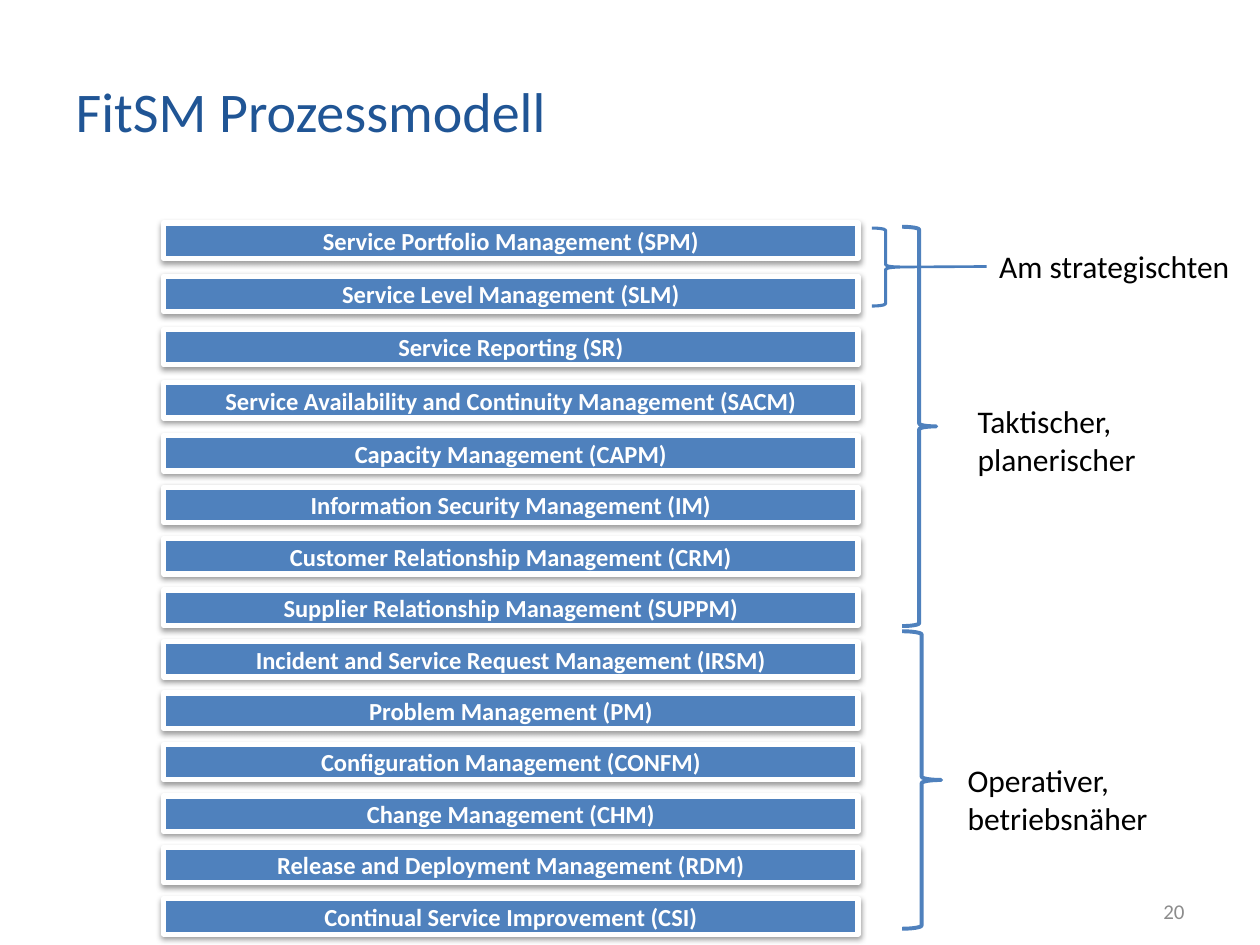
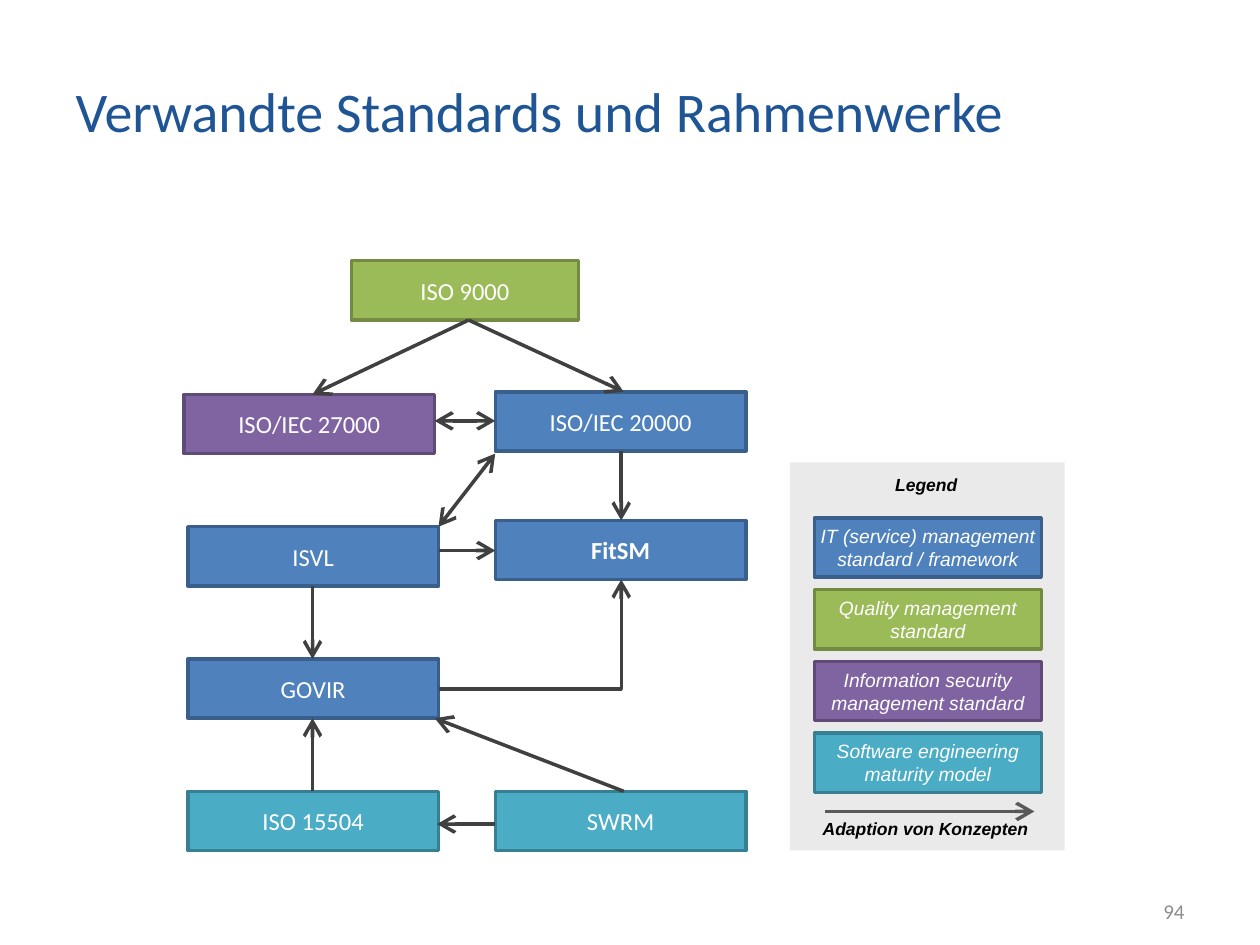
from dataclasses import dataclass

import pptx
import pptx.dml.color
import pptx.enum.shapes
import pptx.enum.text
import pptx.oxml.ns
import pptx.util
from lxml import etree

Pt = pptx.util.Pt
ALIGN = pptx.enum.text.PP_ALIGN
ANCHOR = pptx.enum.text.MSO_ANCHOR
SHAPE = pptx.enum.shapes.MSO_SHAPE
LINK = pptx.enum.shapes.MSO_CONNECTOR
qn = pptx.oxml.ns.qn

WHITE, BLACK, GREY = "FFFFFF", "000000", "8C8C8C"
NAVY, BLUE, STEEL = "205595", "4F81BD", "4B7EBC"
PANEL, DARK, SLATE = "EAEAEA", "404040", "595959"


@dataclass(frozen=True)
class Font:
    size: float
    hue: str
    name: str = "Calibri"
    bold: bool = False
    slant: bool = False
    align: object = ALIGN.LEFT


@dataclass(frozen=True)
class Area:
    left: float
    top: float
    width: float
    height: float

    def points(self) -> list:
        return [Pt(n) for n in (self.left, self.top, self.width, self.height)]


@dataclass(frozen=True)
class Kind:
    fill: str
    edge: str


@dataclass(frozen=True)
class Box:
    text: str
    kind: Kind
    left: float
    top: float
    width: float = 143.3
    bold: bool = False


@dataclass(frozen=True)
class Label:
    text: str
    area: Area


@dataclass(frozen=True)
class Brace:
    area: Area
    hue: str
    weight: float


@dataclass(frozen=True)
class Arrow:
    start: tuple
    end: tuple
    both: bool = False


TITLE = Font(32, NAVY)
NUMBER = Font(12, GREY, align=ALIGN.RIGHT)
BAR = Font(14, WHITE, bold=True, align=ALIGN.CENTER)
NOTE = Font(18, BLACK)
NODE = Font(14, WHITE, align=ALIGN.CENTER)
ENTRY = Font(11, WHITE, "Arial", slant=True, align=ALIGN.CENTER)
HEAD = Font(10, BLACK, "Arial", bold=True, slant=True, align=ALIGN.CENTER)

SERVICE = Kind(BLUE, "3A5F8C")
GRADE = Kind("9BBB59", "738A42")
SAFETY = Kind("8064A2", "5F4A78")
MODEL = Kind("4BACC6", "377F92")
HIGH = 33.8
TIGHT = (5, 3)

BARS = [
    "Service Portfolio Management (SPM)",
    "Service Level Management (SLM)",
    "Service Reporting (SR)",
    "Service Availability and Continuity Management (SACM)",
    "Capacity Management (CAPM)",
    "Information Security Management (IM)",
    "Customer Relationship Management (CRM)",
    "Supplier Relationship Management (SUPPM)",
    "Incident and Service Request Management (IRSM)",
    "Problem Management (PM)",
    "Configuration Management (CONFM)",
    "Change Management (CHM)",
    "Release and Deployment Management (RDM)",
    "Continual Service Improvement (CSI)",
]
NOTES = [
    Label("Taktischer,\vplanerischer", Area(551.5, 226, 106, 51)),
    Label("Operativer,\vbetriebsnäher", Area(545.8, 431.3, 119, 51)),
    Label("Am strategischten", Area(563.8, 137.5, 147.6, 29)),
]
BRACES = [
    Brace(Area(515.5, 129.6, 19.5, 228.2), BLUE, 2.25),
    Brace(Area(515.5, 360.7, 22.3, 170), BLUE, 2.25),
    Brace(Area(498.2, 130.3, 15.8, 44.6), STEEL, 1.75),
]

WEST, EAST = 107.3, 283
BOXES = [
    Box("ISO 9000", GRADE, 200.9, 149, 129.6),
    Box("ISO/IEC 27000", SAFETY, 105.1, 225.4),
    Box("ISO/IEC 20000", SERVICE, EAST, 223.9),
    Box("ISVL", SERVICE, WEST, 301),
    Box("FitSM", SERVICE, EAST, 297.4, bold=True),
    Box("GOVIR", SERVICE, WEST, 376.6),
    Box("ISO 15504", MODEL, WEST, 452.2),
    Box("SWRM", MODEL, EAST, 452.2),
]
ARROWS = [
    Arrow((267.8, 182.9), (178.6, 225.4)),
    Arrow((267.8, 182.9), (356.4, 223.9)),
    Arrow((248.4, 240.5), (EAST, 240.5), both=True),
    Arrow((250.6, 301), (EAST, 259.2), both=True),
    Arrow((355, 257.8), (355, 297.4)),
    Arrow((250.6, 314.6), (EAST, 314.6)),
    Arrow((178.6, 334.8), (178.6, 376.6)),
    Arrow((178.6, 452.2), (178.6, 410.4)),
    Arrow((356.4, 452.2), (248.4, 410.4)),
    Arrow((EAST, 470.9), (249.8, 470.9)),
]
BEND = Arrow((250.6, 393.8), (355, 331.2))
LEGEND = [
    ("IT (service) management\vstandard / framework", SERVICE),
    ("Quality management\nstandard", GRADE),
    ("Information security\vmanagement standard", SAFETY),
    ("Software engineering\vmaturity model", MODEL),
]
HEADS = [
    Label("Legend", Area(457.9, 267.8, 142.6, 18)),
    Label("Adaption von Konzepten", Area(447.1, 464.4, 163.4, 18)),
]


def shade(code: str) -> pptx.dml.color.RGBColor:
    return pptx.dml.color.RGBColor.from_string(code)


def write(shape, text: str, font: Font, anchor=ANCHOR.MIDDLE,
          wrap: bool = True, inset: tuple = (7.2, 3.6)) -> None:
    frame = shape.text_frame
    frame.text = text
    frame.word_wrap = wrap
    frame.auto_size = pptx.enum.text.MSO_AUTO_SIZE.NONE
    frame.vertical_anchor = anchor
    frame.margin_left = frame.margin_right = Pt(inset[0])
    frame.margin_top = frame.margin_bottom = Pt(inset[1])
    for line in frame.paragraphs:
        line.alignment = font.align
        for run in line.runs:
            run.font.name = font.name
            run.font.size = Pt(font.size)
            run.font.bold = font.bold
            run.font.italic = font.slant
            run.font.color.rgb = shade(font.hue)


def label(slide, item: Label, font: Font, **style) -> None:
    shape = slide.shapes.add_textbox(*item.area.points())
    write(shape, item.text, font, **style)


def draw(slide, area: Area, fill: str = "", edge: str = "",
         weight: float = 2, form=SHAPE.RECTANGLE):
    shape = slide.shapes.add_shape(form, *area.points())
    shape.shadow.inherit = False
    if fill:
        shape.fill.solid()
        shape.fill.fore_color.rgb = shade(fill)
    else:
        shape.fill.background()
    if edge:
        shape.line.color.rgb = shade(edge)
        shape.line.width = Pt(weight)
    else:
        shape.line.fill.background()
    return shape


def cast(shape) -> None:
    effects = shape._element.spPr.find(qn("a:effectLst"))
    outer = etree.SubElement(
        effects, qn("a:outerShdw"), blurRad=str(Pt(3.1)), dist=str(Pt(1.6)),
        dir="5400000", rotWithShape="0")
    tint = etree.SubElement(outer, qn("a:srgbClr"), val=BLACK)
    etree.SubElement(tint, qn("a:alpha"), val="38000")


def join(slide, start: tuple, end: tuple, hue: str = DARK, weight: float = 2,
         tips: tuple = ("tailEnd",), form=LINK.STRAIGHT):
    ends = [Pt(n) for n in (*start, *end)]
    line = slide.shapes.add_connector(form, *ends)
    line.line.color.rgb = shade(hue)
    line.line.width = Pt(weight)
    props = line._element.spPr
    for tip in tips:
        etree.SubElement(props.find(qn("a:ln")), qn("a:" + tip),
                         type="arrow", w="lg", len="lg")
    etree.SubElement(props, qn("a:effectLst"))
    return line


def start(deck, title: str, number: str):
    slide = deck.slides.add_slide(deck.slide_layouts[5])
    head = slide.shapes.title
    head.left, head.top, head.width, head.height = Area(
        36, 21.6, 555.8, 82.8).points()
    write(head, title, TITLE)
    label(slide, Label(number, Area(516.2, 506.2, 167.8, 28.8)), NUMBER)
    return slide


def process(deck) -> None:
    slide = start(deck, "FitSM Prozessmodell", "20")
    for i, text in enumerate(BARS):
        top = 127.4 + 30.4 * i if i < 4 else 249 + 29.4 * (i - 4)
        bar = draw(slide, Area(93.6, top, 396.7, 20.2), BLUE, WHITE, 3)
        cast(bar)
        write(bar, text, BAR)
    for note in NOTES:
        label(slide, note, NOTE, anchor=ANCHOR.TOP, wrap=False)
    for brace in BRACES:
        draw(slide, brace.area, edge=brace.hue, weight=brace.weight,
             form=SHAPE.RIGHT_BRACE)
    join(slide, (514, 152.6), (563.8, 152.3), STEEL, 1.5, tips=())


def related(deck) -> None:
    slide = start(deck, "Verwandte Standards und Rahmenwerke", "94")
    draw(slide, Area(451.4, 264.2, 157, 221.8), PANEL)
    keys = [Box(text, kind, 465.5, 296 + 41 * i, 129.6)
            for i, (text, kind) in enumerate(LEGEND)]
    for font, group in ((NODE, BOXES), (ENTRY, keys)):
        for box in group:
            area = Area(box.left, box.top, box.width, HIGH)
            shape = draw(slide, area, box.kind.fill, box.kind.edge)
            write(shape, box.text, font, wrap=False, inset=TIGHT)
            if box.bold:
                shape.text_frame.paragraphs[0].runs[0].font.bold = True
    for head in HEADS:
        label(slide, head, HEAD, anchor=ANCHOR.TOP, inset=TIGHT)
    join(slide, (471.6, 463.7), (591.1, 463.7), SLATE)
    for arrow in ARROWS:
        tips = ("headEnd", "tailEnd") if arrow.both else ("tailEnd",)
        join(slide, arrow.start, arrow.end, tips=tips)
    bend = join(slide, BEND.start, BEND.end, form=LINK.ELBOW)
    bend._element.spPr.find(qn("a:prstGeom")).set("prst", "bentConnector2")


def main() -> None:
    deck = pptx.Presentation()
    deck.slide_width, deck.slide_height = Pt(720), Pt(540)
    process(deck)
    related(deck)
    deck.save("out.pptx")


if __name__ == "__main__":
    main()
